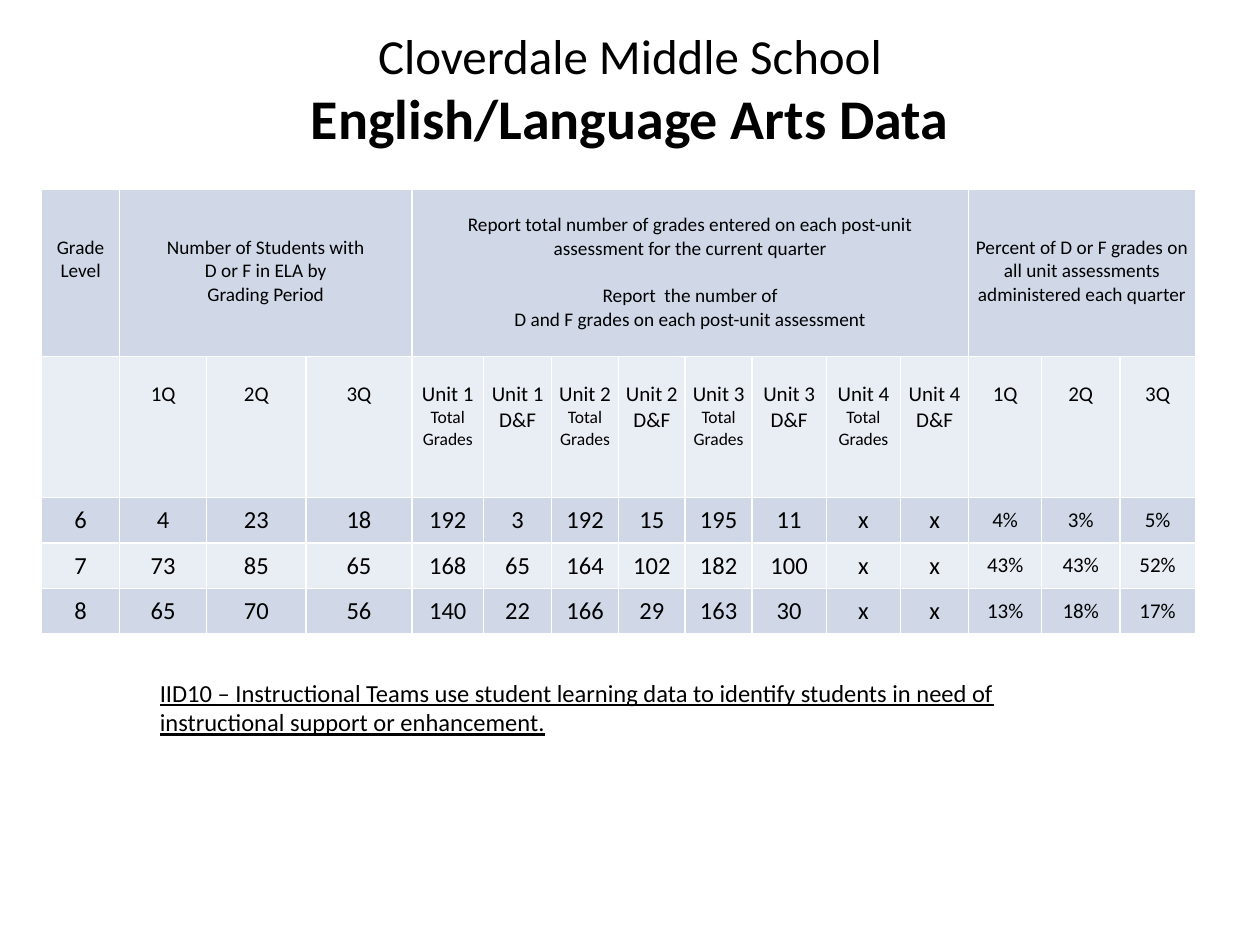
from pptx import Presentation
from pptx.dml.color import RGBColor
from pptx.enum.text import MSO_ANCHOR, MSO_AUTO_SIZE, PP_ALIGN
from pptx.util import Inches, Pt

BLACK = RGBColor(0x00, 0x00, 0x00)
BLUE = RGBColor(0xD0, 0xD8, 0xE8)
PALE = RGBColor(0xE9, 0xED, 0xF4)
FONT = "Calibri"


def style_run(r, size, bold=False, underline=False):
    r.font.name = FONT
    r.font.size = Pt(size)
    r.font.bold = bold
    r.font.underline = underline
    r.font.color.rgb = BLACK


def fill_cell(cell, lines, sizes, top=0, anchor=MSO_ANCHOR.TOP):
    cell.margin_top = Inches(top)
    cell.vertical_anchor = anchor
    cell.text_frame.text = "\n".join(lines)
    for p, size in zip(cell.text_frame.paragraphs, sizes):
        p.alignment = PP_ALIGN.CENTER
        for r in p.runs:
            style_run(r, size)


prs = Presentation()
prs.slide_width = Inches(10)
prs.slide_height = Inches(7.5)
s = prs.slides.add_slide(prs.slide_layouts[5])

title = s.shapes.title
title.left, title.top = Inches(0), Inches(0.58)
title.width, title.height = Inches(10), Inches(0.62)
tf = title.text_frame
tf.text = "Cloverdale Middle School\vEnglish/Language Arts Data"
tf.auto_size = MSO_AUTO_SIZE.NONE
tf.vertical_anchor = MSO_ANCHOR.BOTTOM
tf.margin_top = tf.margin_bottom = Inches(0)
p = tf.paragraphs[0]
p.alignment = PP_ALIGN.CENTER
school, subject = p.runs
style_run(school, 28)
style_run(subject, 32, bold=True)

col_widths = [0.62, 0.69, 0.79, 0.84, 0.57, 0.54, 0.53, 0.53,
              0.53, 0.59, 0.59, 0.54, 0.58, 0.62, 0.6]
row_heights = [1.33, 1.12, 0.36, 0.36, 0.36]
table = s.shapes.add_table(
    len(row_heights), len(col_widths), Inches(0.33), Inches(1.5),
    Inches(sum(col_widths)), Inches(sum(row_heights))).table
table.first_row = False
table.horz_banding = False
for col, width in zip(table.columns, col_widths):
    col.width = Inches(width)
for i, (row, height) in enumerate(zip(table.rows, row_heights)):
    row.height = Inches(height)
    for cell in row.cells:
        cell.fill.solid()
        cell.fill.fore_color.rgb = PALE if i % 2 else BLUE
        cell.margin_left = cell.margin_right = Inches(0.05)
        cell.margin_top = cell.margin_bottom = Inches(0)

headings = [
    (0, 0, 0.37, ["Grade Level"]),
    (1, 3, 0.37, ["Number of Students with", "D or F in ELA by", "Grading Period"]),
    (4, 11, 0.19, ["Report total number of grades entered on each post-unit",
                   "assessment for the current quarter",
                   "Report  the number of",
                   "D and F grades on each post-unit assessment"]),
    (12, 14, 0.37, ["Percent of D or F grades on all unit assessments "
                    "administered each quarter"]),
]
for first, last, top, lines in headings:
    cell = table.cell(0, first)
    if last > first:
        cell.merge(table.cell(0, last))
    fill_cell(cell, lines, [11] * len(lines), top)
table.cell(0, 4).text_frame.paragraphs[2].space_before = Pt(13.4)

quarters = [["1Q"], ["2Q"], ["3Q"]]
units = []
for n in range(1, 5):
    units += [[f"Unit {n}", "Total", "Grades"], [f"Unit {n} D&F"]]
for c, lines in enumerate(quarters + units + quarters, start=1):
    fill_cell(table.cell(1, c), lines, [12, 10, 10], 0.2)

grades = [
    "6 4 23 18 192 3 192 15 195 11 x x 4% 3% 5%",
    "7 73 85 65 168 65 164 102 182 100 x x 43% 43% 52%",
    "8 65 70 56 140 22 166 29 163 30 x x 13% 18% 17%",
]
for i, line in enumerate(grades, start=2):
    for c, value in enumerate(line.split()):
        size = 12 if value.endswith("%") else 14
        fill_cell(table.cell(i, c), [value], [size], anchor=MSO_ANCHOR.MIDDLE)

note = s.shapes.add_textbox(Inches(1.17), Inches(5.33), Inches(7.67), Inches(1.41))
tf = note.text_frame
tf.word_wrap = True
tf.text = ("IID10 – Instructional Teams use student learning data to identify "
           "students in need of instructional support or enhancement.")
style_run(tf.paragraphs[0].runs[0], 14, underline=True)

prs.save("out.pptx")
